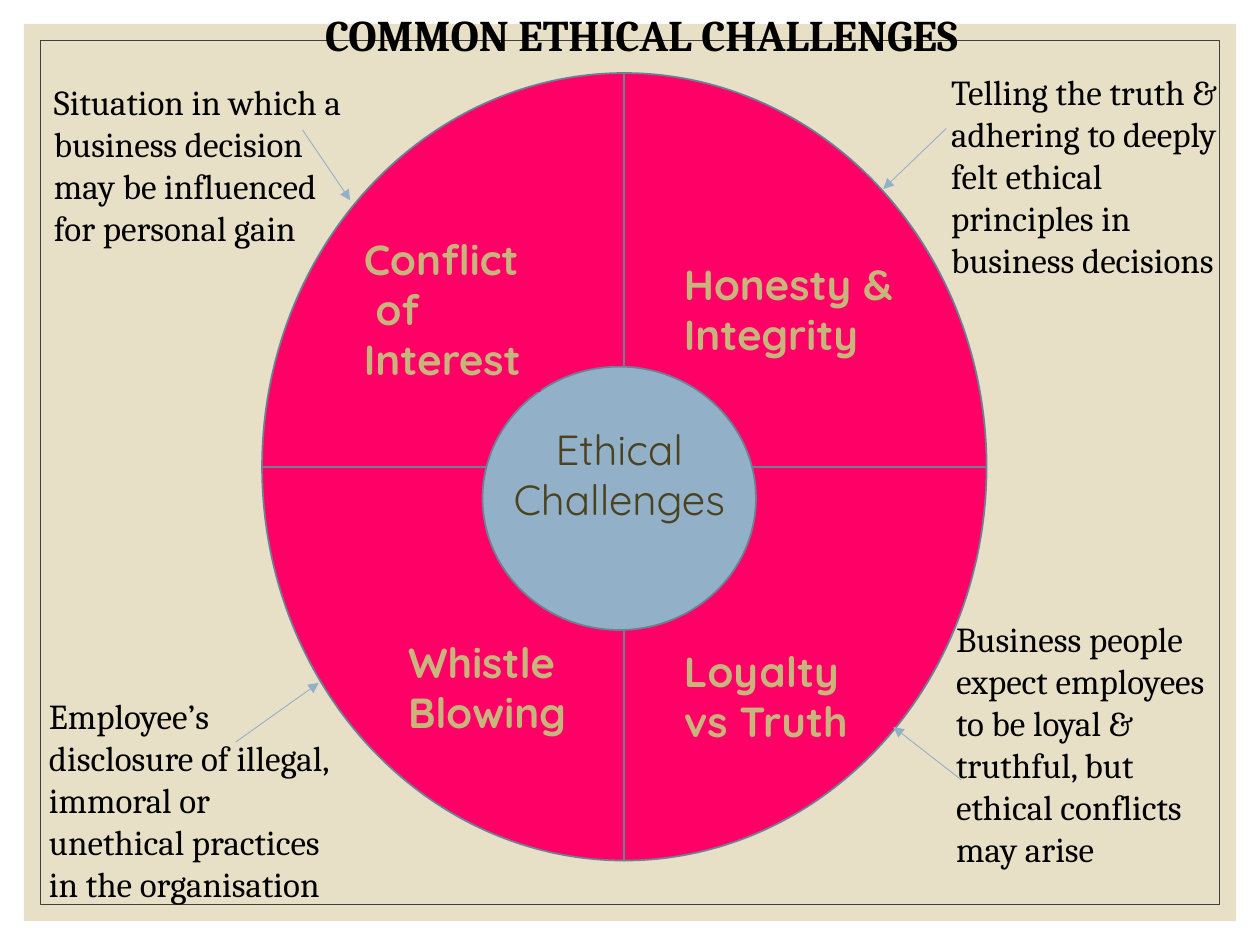
from lxml import etree
from pptx import Presentation
from pptx.dml.color import RGBColor
from pptx.enum import shapes, text
from pptx.oxml.ns import qn
from pptx.util import Inches, Pt

SAND = RGBColor(0xE7, 0xE0, 0xC7)
PINK = RGBColor(0xFF, 0x00, 0x66)
BLUE = RGBColor(0x92, 0xB0, 0xC8)
SLATE = RGBColor(0x6C, 0x82, 0x94)
GOLD = RGBColor(0xC7, 0xB6, 0x7C)
BROWN = RGBColor(0x4B, 0x42, 0x20)
GREY = RGBColor(0x40, 0x40, 0x40)
BLACK = RGBColor(0, 0, 0)
HEAD, BODY = "Quicksand", "Cambria"
WIDE, HIGH = 10, 7.5

TITLE = ("COMMON ETHICAL CHALLENGES", (1.87, 0.01, 6.44, 0.52))
HUB = ("Ethical Challenges", (3.83, 3.31, 2.17, 0.91))
LABELS = [
    ("Conflict\v of Interest", (2.79, 1.8, 1.5, 1.31), PINK),
    ("Honesty & Integrity", (5.33, 2, 2, 0.91), None),
    ("Whistle Blowing", (3.14, 5, 1.5, 1.31), None),
    ("Loyalty vs Truth", (5.33, 5.07, 1.58, 0.91), None),
]
# Wording, box, arrow start, arrow end
NOTES = [
    ("Telling the truth & adhering to deeply felt ethical principles "
     "in business decisions",
     (7.45, 0.51, 2.33, 2.12), (7.51, 1.02), (7.01, 1.5)),
    ("Situation in which a business decision may be influenced "
     "for personal gain",
     (0.33, 0.59, 2.48, 1.78), (2.4, 1.03), (2.78, 1.59)),
    ("Business people expect employees to be loyal & truthful, "
     "but ethical conflicts may arise",
     (7.49, 4.85, 2.36, 2.46), (7.63, 6.19), (7.09, 5.77)),
    ("Employee’s disclosure of illegal, immoral or unethical practices "
     "in the organisation",
     (0.29, 5.46, 2.55, 1.78), (1.87, 5.89), (2.53, 5.42)),
]

deck = Presentation()
deck.slide_width, deck.slide_height = Inches(WIDE), Inches(HIGH)
slide = deck.slides.add_slide(deck.slide_layouts[6])
KIND = shapes.MSO_SHAPE


def inches(nums):
    return [Inches(n) for n in nums]


def inset(gap):
    """Box that leaves the same gap to every edge of the slide."""
    return gap, gap, WIDE - 2 * gap, HIGH - 2 * gap


def draw(kind, box, fill=None, line=None, width=1):
    shape = slide.shapes.add_shape(kind, *inches(box))
    shape.shadow.inherit = False
    if fill is None:
        shape.fill.background()
    else:
        shape.fill.solid()
        shape.fill.fore_color.rgb = fill
    if line is None:
        shape.line.fill.background()
    else:
        shape.line.color.rgb = line
        shape.line.width = Pt(width)
    return shape


def write(words, box, font, size, color, bold=False, center=False, fill=None):
    label = slide.shapes.add_textbox(*inches(box))
    if fill is not None:
        label.fill.solid()
        label.fill.fore_color.rgb = fill
    frame = label.text_frame
    frame.word_wrap = True
    frame.text = words
    para = frame.paragraphs[0]
    para.alignment = text.PP_ALIGN.CENTER if center else text.PP_ALIGN.LEFT
    para.font.name, para.font.size = font, Pt(size)
    para.font.bold, para.font.color.rgb = bold, color


def arrow(start, end):
    link = slide.shapes.add_connector(
        shapes.MSO_CONNECTOR.STRAIGHT, *inches(start + end))
    link.line.color.rgb = BLUE
    link.line.width = Pt(0.5)
    etree.SubElement(link.line._get_or_add_ln(), qn("a:tailEnd"),
                     type="triangle")
    etree.SubElement(link._element.spPr, qn("a:effectLst"))


draw(KIND.RECTANGLE, inset(0.19), SAND)
draw(KIND.RECTANGLE, inset(0.32), line=GREY, width=0.5)
draw(KIND.FLOWCHART_OR, (2.08, 0.58, 5.75, 6.25), PINK, SLATE)
draw(KIND.FLOWCHART_CONNECTOR, (3.83, 2.91, 2.17, 2.09), BLUE, SLATE)

for words, box, fill in LABELS:
    write(words, box, HEAD, 24, GOLD, bold=True, fill=fill)
write(*HUB, HEAD, 24, BROWN, center=True)
write(*TITLE, BODY, 25, BLACK, bold=True, center=True)
for words, box, start, end in NOTES:
    write(words, box, BODY, 20, BLACK)
    arrow(start, end)

deck.save("out.pptx")
